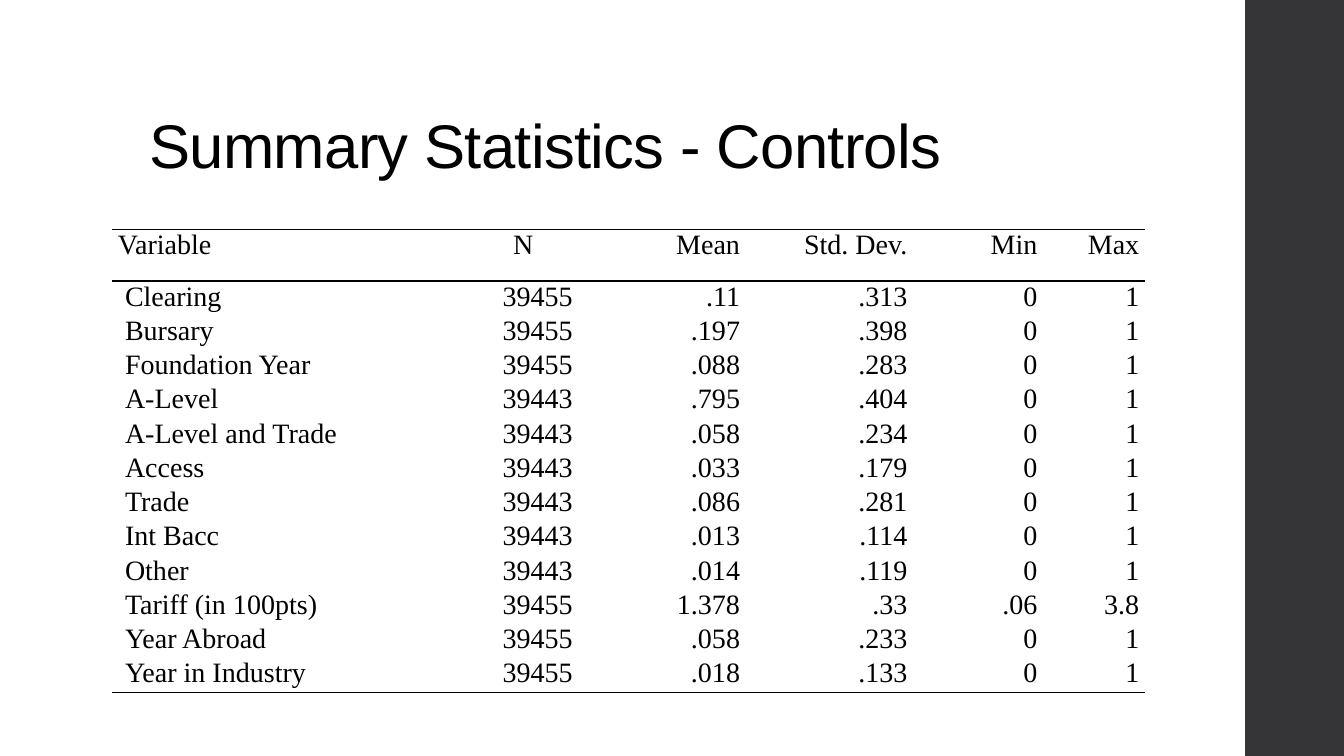
from lxml.etree import SubElement
from pptx import Presentation
from pptx.dml.color import RGBColor
from pptx.enum.shapes import MSO_SHAPE
from pptx.enum.text import MSO_ANCHOR, PP_ALIGN
from pptx.oxml.ns import qn
from pptx.util import Inches, Pt

TITLE = "Summary Statistics - Controls"
HEADER = ("Variable", "N", "Mean", "Std. Dev.", "Min", "Max")
CONTROLS = [
    ("Clearing", "39455", ".11", ".313", "0", "1"),
    ("Bursary", "39455", ".197", ".398", "0", "1"),
    ("Foundation Year", "39455", ".088", ".283", "0", "1"),
    ("A-Level", "39443", ".795", ".404", "0", "1"),
    ("A-Level and Trade", "39443", ".058", ".234", "0", "1"),
    ("Access", "39443", ".033", ".179", "0", "1"),
    ("Trade", "39443", ".086", ".281", "0", "1"),
    ("Int Bacc", "39443", ".013", ".114", "0", "1"),
    ("Other", "39443", ".014", ".119", "0", "1"),
    ("Tariff (in 100pts)", "39455", "1.378", ".33", ".06", "3.8"),
    ("Year Abroad", "39455", ".058", ".233", "0", "1"),
    ("Year in Industry", "39455", ".018", ".133", "0", "1"),
]
COLUMN_WIDTHS = (3.53, 1.1, 1.66, 1.66, 1.29, 1.01)
HEADER_HEIGHT, ROW_HEIGHT, CLOSING_HEIGHT = 0.51, 0.34, 0.17
CELL_MARGIN, LABEL_MARGIN = 0.06, 0.13
NO_STYLE = "{2D5ABB26-0587-4C30-8999-92F81FD0307C}"

BLACK = RGBColor(0x00, 0x00, 0x00)
CHARCOAL = RGBColor(0x35, 0x35, 0x37)


def add_border(cell, side, points):
    properties = cell._tc.get_or_add_tcPr()
    line = SubElement(properties, qn(f"a:{side}"), w=str(Pt(points)))
    if points:
        fill = SubElement(line, qn("a:solidFill"))
        SubElement(fill, qn("a:srgbClr"), val=str(BLACK))
    else:
        SubElement(line, qn("a:noFill"))


def add_title(slide):
    title = slide.shapes.title
    title.left, title.top = Inches(1.38), Inches(0.4)
    title.width, title.height = Inches(10.6), Inches(1.45)
    title.text_frame.text = TITLE
    title.text_frame.vertical_anchor = MSO_ANCHOR.BOTTOM
    paragraph = title.text_frame.paragraphs[0]
    paragraph.alignment = PP_ALIGN.LEFT
    paragraph.line_spacing = 0.9
    font = paragraph.runs[0].font
    font.name, font.size = "Arial", Pt(44)
    font.color.rgb = BLACK
    paragraph.runs[0]._r.get_or_add_rPr().set("spc", "-50")


def add_side_bar(slide):
    bar = slide.shapes.add_shape(
        MSO_SHAPE.RECTANGLE, Inches(12.35), 0, Inches(0.98), Inches(7.5))
    bar.shadow.inherit = False
    bar.fill.solid()
    bar.fill.fore_color.rgb = CHARCOAL
    bar.line.fill.background()


def fill_cell(cell, text, row, column):
    is_label = column == 0 and row > 0
    cell.margin_left = Inches(LABEL_MARGIN if is_label else CELL_MARGIN)
    cell.margin_right = Inches(CELL_MARGIN)
    cell.margin_top = cell.margin_bottom = 0
    cell.text_frame.text = text
    paragraph = cell.text_frame.paragraphs[0]
    if column == 0:
        paragraph.alignment = PP_ALIGN.LEFT
    elif (row, column) == (0, 1):
        paragraph.alignment = PP_ALIGN.CENTER
    else:
        paragraph.alignment = PP_ALIGN.RIGHT
    font = paragraph.runs[0].font
    font.name, font.size = "Times New Roman", Pt(20)
    font.color.rgb = BLACK


def add_statistics_table(slide):
    rows = [HEADER] + CONTROLS
    heights = [HEADER_HEIGHT] + [ROW_HEIGHT] * len(CONTROLS) + [CLOSING_HEIGHT]
    frame = slide.shapes.add_table(
        len(heights), len(HEADER), Inches(1.11), Inches(2.28),
        Inches(sum(COLUMN_WIDTHS)), Inches(sum(heights)))
    table = frame.table
    table.first_row = table.horz_banding = False
    table._tbl.tblPr.find(qn("a:tableStyleId")).text = NO_STYLE
    for column, width in zip(table.columns, COLUMN_WIDTHS):
        column.width = Inches(width)
    for table_row, height in zip(table.rows, heights):
        table_row.height = Inches(height)

    closing = len(rows)
    rules = {0: 1, 1: 1.5, closing: 1}
    for row in range(len(heights)):
        for column in range(len(HEADER)):
            cell = table.cell(row, column)
            if row < closing:
                fill_cell(cell, rows[row][column], row, column)
            else:
                cell.margin_top = cell.margin_bottom = 0
                cell.text_frame.paragraphs[0].font.size = Pt(8)
            add_border(cell, "lnT", rules.get(row, 0))
            add_border(cell, "lnB", rules.get(row + 1, 0))
            cell.fill.background()
    table.cell(closing, 0).merge(table.cell(closing, len(HEADER) - 1))


def main():
    presentation = Presentation()
    presentation.slide_width = Inches(13.33)
    presentation.slide_height = Inches(7.5)
    slide = presentation.slides.add_slide(presentation.slide_layouts[5])
    add_side_bar(slide)
    add_title(slide)
    add_statistics_table(slide)
    presentation.save("out.pptx")


if __name__ == "__main__":
    main()
